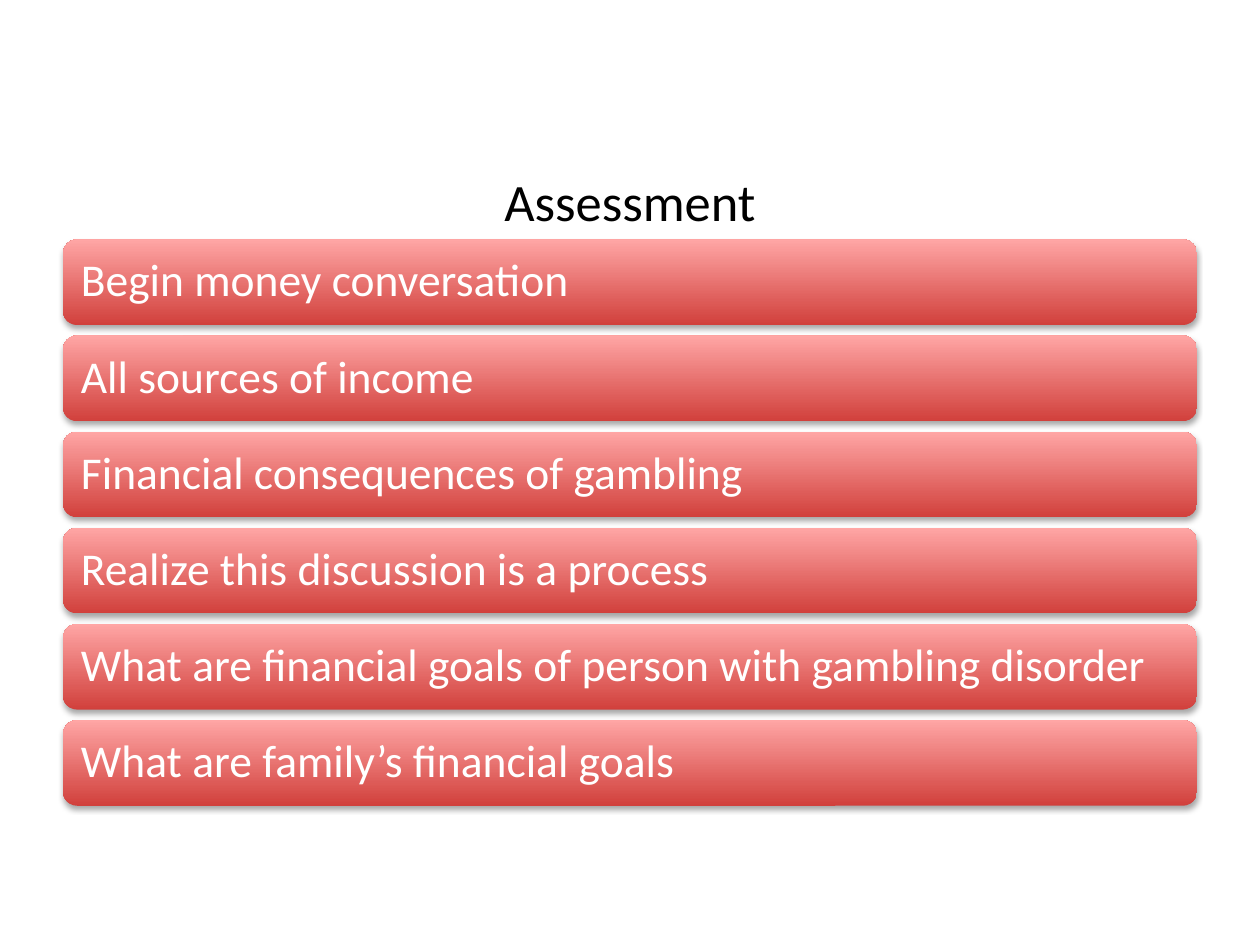
from lxml.etree import SubElement
from pptx import Presentation
from pptx.dml.color import RGBColor
from pptx.enum.shapes import MSO_SHAPE as Shape
from pptx.enum.text import MSO_ANCHOR as Anchor, PP_ALIGN as Align
from pptx.oxml.ns import qn
from pptx.util import Inches, Pt

TITLE = "Assessment"
TOPICS = [
    "Begin money conversation",
    "All sources of income",
    "Financial consequences of gambling",
    "Realize this discussion is a process",
    "What are financial goals of person with gambling disorder",
    "What are family’s financial goals",
]
GRADIENT = ("D1403C", "FFA6A5")
WIDTH, HEIGHT = Inches(10), Inches(7.5)
MARGIN = WIDTH * 0.05
FIRST_TOP, ROW_STEP, BAR_HEIGHT = Inches(1.9), Inches(0.763), Inches(0.68)


def rgb(value):
    return RGBColor.from_string(value)


def write(sp, text, size, color, align, inset=0.1, spacing=1.0):
    tf = sp.text_frame
    tf.word_wrap = True
    tf.vertical_anchor = Anchor.MIDDLE
    tf.margin_left = tf.margin_right = Inches(inset)
    tf.margin_top = tf.margin_bottom = Inches(inset)
    p = tf.paragraphs[0]
    p.alignment, p.line_spacing = align, spacing
    r = p.add_run()
    r.text = text
    r.font.size, r.font.name = Pt(size), "Calibri"
    r.font.color.rgb = rgb(color)


def add_shadow(sp, color="000000", alpha=35, blur=3.1, distance=1.8, angle=90):
    sp.shadow.inherit = False
    effects = sp._element.spPr.find(qn("a:effectLst"))
    shadow = SubElement(effects, qn("a:outerShdw"), blurRad=str(Pt(blur)),
                        dist=str(Pt(distance)), dir=str(angle * 60000), rotWithShape="0")
    clr = SubElement(shadow, qn("a:srgbClr"), val=color)
    SubElement(clr, qn("a:alpha"), val=str(alpha * 1000))


def add_bar(s, row, text):
    sp = s.shapes.add_shape(Shape.ROUNDED_RECTANGLE, int(MARGIN), FIRST_TOP + row * ROW_STEP,
                            int(WIDTH - 2 * MARGIN), BAR_HEIGHT)
    sp.fill.gradient()
    sp.fill.gradient_angle = 90
    for stop, color in zip(sp.fill.gradient_stops, GRADIENT):
        stop.color.rgb = rgb(color)
    sp.line.fill.background()
    add_shadow(sp)
    write(sp, text, 26, "FFFFFF", Align.LEFT, inset=0.11, spacing=0.9)


def main():
    """Build the assessment slide: a title above a stack of topic bars."""
    prs = Presentation()
    prs.slide_width, prs.slide_height = WIDTH, HEIGHT
    s = prs.slides.add_slide(prs.slide_layouts[5])
    title = s.shapes.title
    title.left, title.top = int(MARGIN), Inches(0.97)
    title.width, title.height = int(WIDTH - 2 * MARGIN), Inches(1.25)
    write(title, TITLE, 30, "000000", Align.CENTER)
    for row, text in enumerate(TOPICS):
        add_bar(s, row, text)
    prs.save("out.pptx")


if __name__ == "__main__":
    main()
